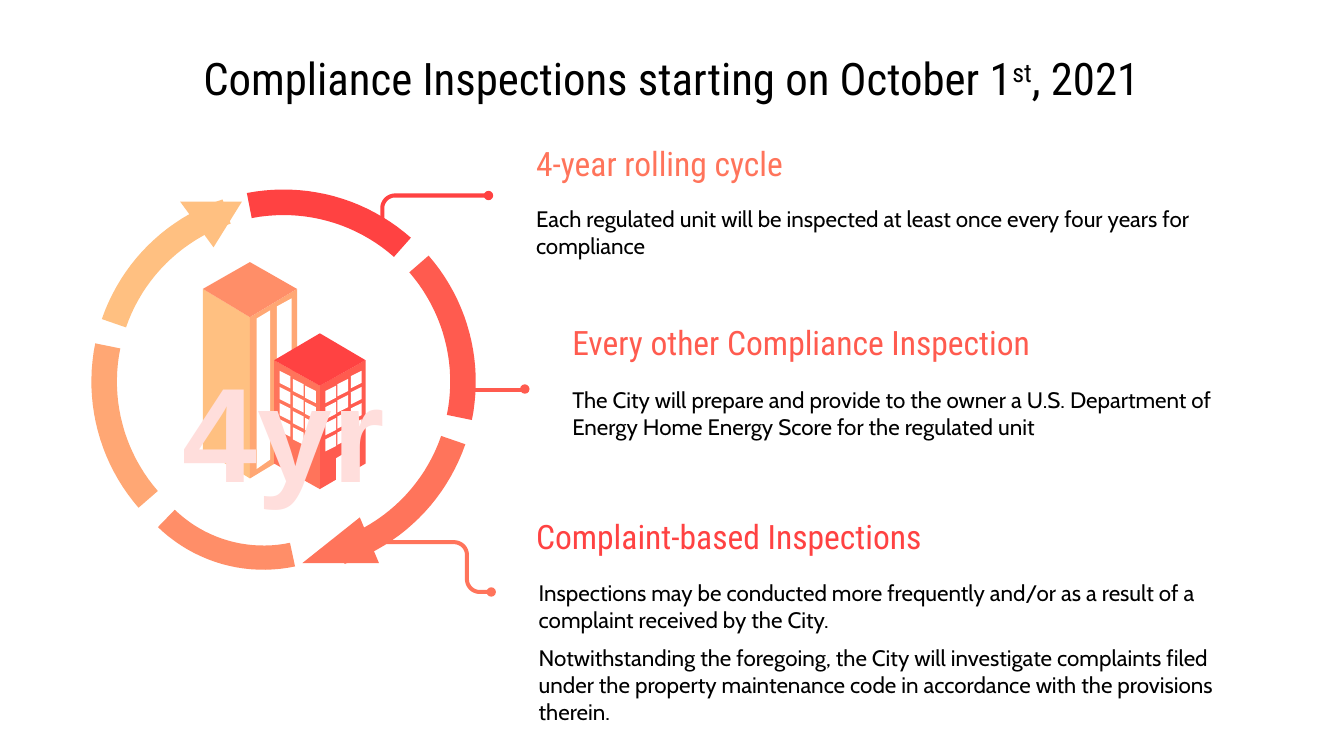
import math

from lxml import etree
from pptx import Presentation
from pptx import util as u
from pptx.dml.color import RGBColor
from pptx.enum import shapes, text
from pptx.oxml.ns import qn

PX = 9144  # 100 px to the inch
HEADING, BODY = "Roboto Condensed", "Cabin"
RED, CORAL, SALMON = "FF4242", "FF5B4F", "FF745B"
ORANGE, PEACH, SAND = "FF8E68", "FFA774", "FFC081"
WHITE, BLACK, BLUSH = "FFFFFF", "000000", "FFDEDC"
MIDDLE, TOP = text.MSO_ANCHOR.MIDDLE, text.MSO_ANCHOR.TOP


def px(*lengths):
    return [u.Emu(round(length * PX)) for length in lengths]


def color(value):
    return RGBColor.from_string(value)


def paint(shape, fill):
    shape.shadow.inherit = False
    shape.fill.solid()
    shape.fill.fore_color.rgb = color(fill)
    shape.line.fill.background()


def polygon(slide, points, fill):
    corners = [px(x, y) for x, y in points]
    builder = slide.shapes.build_freeform(*corners[0], scale=1.0)
    builder.add_line_segments(corners[1:], close=True)
    paint(builder.convert_to_shape(), fill)


def preset(slide, kind, box, fill):
    shape = slide.shapes.add_shape(kind, *px(*box))
    paint(shape, fill)
    return shape


def arc(cx, cy, radius, start, end):
    """Points along an arc; degrees run clockwise from the right."""
    steps = 20
    angles = [math.radians(start + (end - start) * i / steps) for i in range(steps + 1)]
    return [(cx + radius * math.cos(a), cy + radius * math.sin(a)) for a in angles]


def ring_segment(slide, center, outer, inner, start, end, fill):
    points = arc(*center, outer, start, end) + arc(*center, inner, end, start)
    polygon(slide, points, fill)


def add_run(paragraph, words, font, size, ink, bold=False):
    run = paragraph.add_run()
    run.text = words
    run.font.name = font
    run.font.size = u.Pt(size)
    run.font.bold = bold
    run.font.color.rgb = color(ink)
    return run


def text_frame(slide, box, anchor):
    frame = slide.shapes.add_textbox(*px(*box)).text_frame
    frame.word_wrap = True
    frame.vertical_anchor = anchor
    frame.margin_left = frame.margin_right = px(10)[0]
    frame.margin_top = frame.margin_bottom = px(10)[0]
    return frame


def title(slide):
    paragraph = text_frame(slide, (135, 35, 729, 46), MIDDLE).paragraphs[0]
    paragraph.alignment = text.PP_ALIGN.CENTER
    for words, raised in (("Compliance Inspections starting on October 1", False),
                          ("st", True), (", 2021", False)):
        run = add_run(paragraph, words, HEADING, 24, BLACK)
        if raised:
            run.font._element.set("baseline", "30000")


def section(slide, heading, heading_box, ink, body, body_box, anchor):
    frame = text_frame(slide, heading_box, MIDDLE)
    add_run(frame.paragraphs[0], heading, HEADING, 18, ink)
    frame = text_frame(slide, body_box, anchor)
    for i, words in enumerate(body):
        paragraph = frame.add_paragraph() if i else frame.paragraphs[0]
        if len(body) > 1:
            paragraph.space_after = u.Pt(6)
        add_run(paragraph, words, BODY, 12, BLACK)


def tall_tower(slide):
    polygon(slide, [(151, 215), (151, 335), (186, 356), (186, 236)], SAND)
    polygon(slide, [(221, 215), (186, 236), (186, 356), (221, 335)], PEACH)
    polygon(slide, [(217, 222), (206, 228), (206, 340), (217, 334)], WHITE)
    polygon(slide, [(201, 231), (191, 237), (191, 349), (201, 342)], WHITE)
    polygon(slide, [(186, 195), (151, 215), (186, 236), (221, 215)], ORANGE)


def short_tower(slide):
    polygon(slide, [(272, 268), (238, 287), (238, 364), (250, 357), (250, 341),
                    (260, 335), (260, 352), (272, 345)], CORAL)
    polygon(slide, [(204, 268), (204, 345), (238, 364), (238, 287)], SALMON)
    polygon(slide, [(238, 248), (204, 268), (238, 287), (272, 268)], RED)
    for x, first_y in ((208, 276), (218, 282), (227, 287)):
        for row in range(4):
            y = first_y + 12 * row
            pane = [(x, y), (x, y + 9), (x + 8, y + 13), (x + 8, y + 4)]
            polygon(slide, pane, WHITE)
            polygon(slide, [(477 - a, b) for a, b in pane], WHITE)


def cycle(slide):
    for slot, fill in ((0, RED), (1, CORAL), (2, SALMON), (4, PEACH), (5, SAND)):
        start = -101 + 60 * slot
        ring_segment(slide, (211, 284), 143, 124, start, start + 52.5, fill)
    ring_segment(slide, (196, 311), 113, 95, 134, 78, ORANGE)


def arrowheads(slide):
    upper = preset(slide, shapes.MSO_SHAPE.ISOSCELES_TRIANGLE, (134, 150, 46, 34), SAND)
    upper.adjustments[0] = 0.46
    upper.rotation = 180
    lower = preset(slide, shapes.MSO_SHAPE.ISOSCELES_TRIANGLE, (225, 385, 57, 34), SALMON)
    lower.adjustments[0] = 0.75


def callouts(slide):
    polygon(slide, arc(294, 155, 11, 270, 180) + [(283, 171), (286, 171)]
            + arc(294, 155, 8, 180, 270) + [(363, 147), (363, 144)], RED)

    straight = slide.shapes.add_connector(
        shapes.MSO_CONNECTOR.STRAIGHT, *px(350, 290, 391, 290))
    straight.line.color.rgb = color(CORAL)
    straight.line.width = u.Pt(2)
    etree.SubElement(straight._element.spPr, qn("a:effectLst"))

    polygon(slide, [(270, 402)] + arc(338, 413, 11, 270, 360)
            + arc(357, 431, 8, 180, 90) + [(366, 439), (366, 442)]
            + arc(357, 431, 11, 90, 180) + arc(338, 413, 8, 360, 270)
            + [(270, 405)], SALMON)

    for x, y, fill in ((360, 142, RED), (387, 286, CORAL), (362, 437, SALMON)):
        preset(slide, shapes.MSO_SHAPE.OVAL, (x, y, 7, 7), fill)


def period(slide):
    frame = slide.shapes.add_textbox(*px(125, 254, 172, 131)).text_frame
    frame.word_wrap = False
    frame.auto_size = text.MSO_AUTO_SIZE.SHAPE_TO_FIT_TEXT
    paragraph = frame.paragraphs[0]
    paragraph.alignment = text.PP_ALIGN.CENTER
    run = add_run(paragraph, "4yr", "Arial", 72, BLUSH, bold=True)
    outline = etree.Element(qn("a:ln"), w=str(u.Pt(1)))
    solid = etree.SubElement(outline, qn("a:solidFill"))
    etree.SubElement(solid, qn("a:srgbClr"), val=RED)
    run.font._element.insert(0, outline)


def main():
    deck = Presentation()
    deck.slide_width = px(1000)[0]
    deck.slide_height = u.Emu(deck.slide_width * 9 // 16)
    slide = deck.slides.add_slide(deck.slide_layouts[6])
    title(slide)
    tall_tower(slide)
    short_tower(slide)
    cycle(slide)
    callouts(slide)
    section(slide, "4-year rolling cycle", (389, 108, 534, 27), SALMON,
            ["Each regulated unit will be inspected at least once every four years "
             "for compliance"], (389, 143, 534, 63), TOP)
    section(slide, "Every other Compliance Inspection", (416, 241, 507, 27), CORAL,
            ["The City will prepare and provide to the owner a U.S. Department of "
             "Energy Home Energy Score for the regulated unit"],
            (416, 276, 507, 63), MIDDLE)
    section(slide, "Complaint-based Inspections", (389, 376, 532, 45), RED,
            ["Inspections may be conducted more frequently and/or as a result of a "
             "complaint received by the City.",
             "Notwithstanding the foregoing, the City will investigate complaints "
             "filed under the property maintenance code in accordance with the "
             "provisions therein."], (391, 433, 532, 104), MIDDLE)
    period(slide)
    arrowheads(slide)
    deck.save("out.pptx")


if __name__ == "__main__":
    main()
